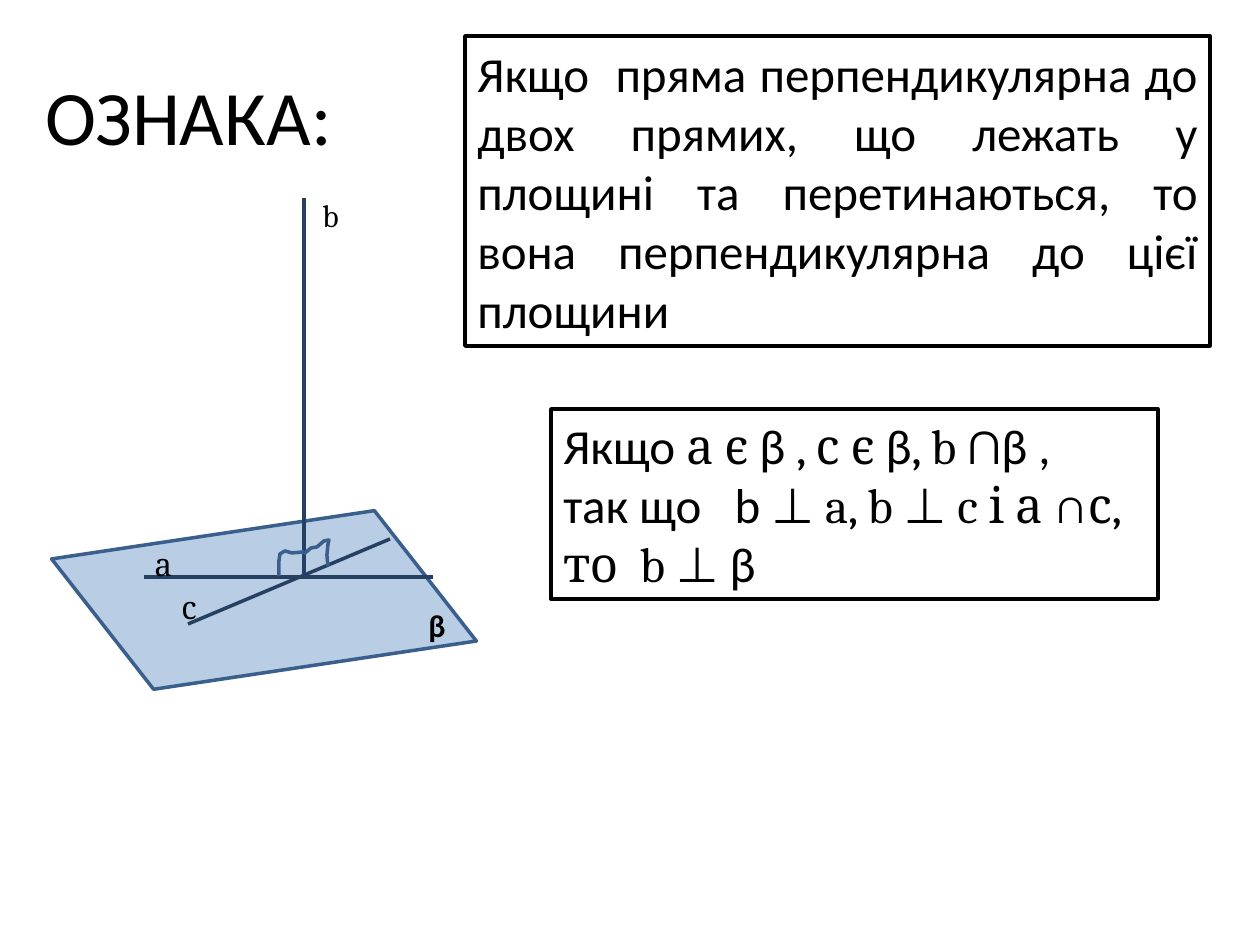
from pptx import Presentation
from pptx.dml.color import RGBColor
from pptx.enum.shapes import MSO_CONNECTOR, MSO_SHAPE
from pptx.enum.text import MSO_ANCHOR, MSO_AUTO_SIZE, PP_ALIGN
from pptx.oxml.ns import qn
from pptx.util import Emu, Pt
from lxml import etree

PX = 914400 / 126
STRAIGHT = MSO_CONNECTOR.STRAIGHT
RECTANGLE = MSO_SHAPE.RECTANGLE
PARALLELOGRAM = MSO_SHAPE.FLOWCHART_DATA
MIDDLE, TOP = MSO_ANCHOR.MIDDLE, MSO_ANCHOR.TOP
GROW = MSO_AUTO_SIZE.SHAPE_TO_FIT_TEXT
LEFT, JUSTIFY = PP_ALIGN.LEFT, PP_ALIGN.JUSTIFY
SANS, SERIF = "Calibri", "Cambria"
COLORS = {"text": "000000", "paper": "FFFFFF", "plane": "B9CDE5",
          "edge": "3A5F8C", "line": "254061"}

TITLE = [[("ОЗНАКА:", SANS)]]
THEOREM = [[("Якщо  пряма перпендикулярна до двох прямих, що лежать у площині "
             "та перетинаються, то вона перпендикулярна до цієї площини", SANS)]]
NOTATION = [
    [("Якщо ", SANS), ("а є ", SERIF), ("β ", SANS), (", с є ", SERIF),
     ("β", SANS), (", b ∩", SERIF), ("β ,", SANS)],
    [("так що   b ⊥ ", SANS), ("a, b ", SERIF), ("⊥ ", SANS),
     ("c і а ", SERIF), ("∩", SANS), ("с,", SERIF)],
    [("то  b ", SERIF), ("⊥ β", SANS)],
]


def px(*lengths):
    """Turn pixel lengths into EMU."""
    return [Emu(round(length * PX)) for length in lengths]


def color(name):
    """Return a named colour."""
    return RGBColor.from_string(COLORS[name])


def outline(line, name):
    """Give a line its colour and width."""
    line.color.rgb = color(name)
    line.width = Pt(2)


def write(frame, paragraphs, size, align=LEFT, bold=False, **layout):
    """Fill a text frame with paragraphs of (text, font) runs."""
    for key, value in layout.items():
        setattr(frame, key, value)
    for index, parts in enumerate(paragraphs):
        paragraph = frame.add_paragraph() if index else frame.paragraphs[0]
        paragraph.alignment = align
        for text, typeface in parts:
            run = paragraph.add_run()
            run.text = text
            run.font.color.rgb = color("text")
            values = {"name": typeface, "size": Pt(size), "bold": bold}
            for key, value in values.items():
                setattr(run.font, key, value)


def add_title(slide, box):
    """Place the heading."""
    heading = slide.shapes.add_textbox(*px(*box))
    write(heading.text_frame, TITLE, 44, word_wrap=True, vertical_anchor=MIDDLE)


def add_statement(slide, box, paragraphs):
    """Place a framed statement."""
    statement = slide.shapes.add_shape(RECTANGLE, *px(*box))
    statement.shadow.inherit = False
    statement.fill.solid()
    statement.fill.fore_color.rgb = color("paper")
    outline(statement.line, "text")
    write(statement.text_frame, paragraphs, 28, JUSTIFY, word_wrap=True,
          vertical_anchor=MIDDLE, auto_size=GROW)


def add_plane(slide, box):
    """Place the tilted plane."""
    plane = slide.shapes.add_shape(PARALLELOGRAM, *px(*box))
    plane.shadow.inherit = False
    plane.rotation = 351.5
    plane._element.spPr.find(qn("a:xfrm")).set("flipV", "1")
    plane.fill.solid()
    plane.fill.fore_color.rgb = color("plane")
    outline(plane.line, "edge")


def add_line(slide, start, end):
    """Place one straight line of the drawing."""
    line = slide.shapes.add_connector(STRAIGHT, *px(*start, *end))
    etree.SubElement(line._element.spPr, qn("a:effectLst"))
    outline(line.line, "line")


def add_angle_mark(slide, points):
    """Place one right-angle mark."""
    start, *rest = points
    builder = slide.shapes.build_freeform(*start, scale=PX)
    builder.add_line_segments(rest, close=False)
    mark = builder.convert_to_shape()
    mark.shadow.inherit = False
    mark.fill.background()
    outline(mark.line, "edge")


def add_label(slide, box, text, typeface, bold=False):
    """Place the name of a line or plane."""
    label = slide.shapes.add_textbox(*px(*box))
    write(label.text_frame, [[(text, typeface)]], 18, bold=bold,
          word_wrap=False, vertical_anchor=TOP, auto_size=GROW)


def add_drawing(slide, left, top):
    """Place the plane with its lines, angle marks and labels."""
    def at(x, y, *size):
        """Shift a point or box into the drawing."""
        return (left + x, top + y, *size)

    add_plane(slide, at(8, 330, 408, 144))
    lines = [((252, 0), (252, 379)), ((92, 379), (381, 379)),
             ((136, 426), (338, 341))]
    for start, end in lines:
        add_line(slide, at(*start), at(*end))
    marks = [
        [(252, 356), (259, 350), (265, 349), (272, 343), (277, 342),
         (276, 347), (275, 357), (276, 368)],
        [(252, 354), (240, 355), (233, 353), (228, 356), (227, 363), (227, 378)],
    ]
    for points in marks:
        add_angle_mark(slide, [at(*point) for point in points])
    labels = [("β", (364, 402, 60, 84), SANS, True),
              ("b", (258, -8, 60, 84), SERIF, False),
              ("а", (90, 341, 40, 50), SERIF, False),
              ("с", (117, 384, 40, 50), SERIF, False)]
    for text, box, typeface, bold in labels:
        add_label(slide, at(*box), text, typeface, bold)


def main():
    """Build the slide and save it."""
    deck = Presentation()
    deck.slide_width, deck.slide_height = px(1260, 945)
    slide = deck.slides.add_slide(deck.slide_layouts[6])
    add_title(slide, (33, 36, 1134, 158))
    add_drawing(slide, 52, 198)
    add_statement(slide, (551, 409, 607, 190), NOTATION)
    add_statement(slide, (465, 36, 745, 310), THEOREM)
    deck.save("out.pptx")


if __name__ == "__main__":
    main()
